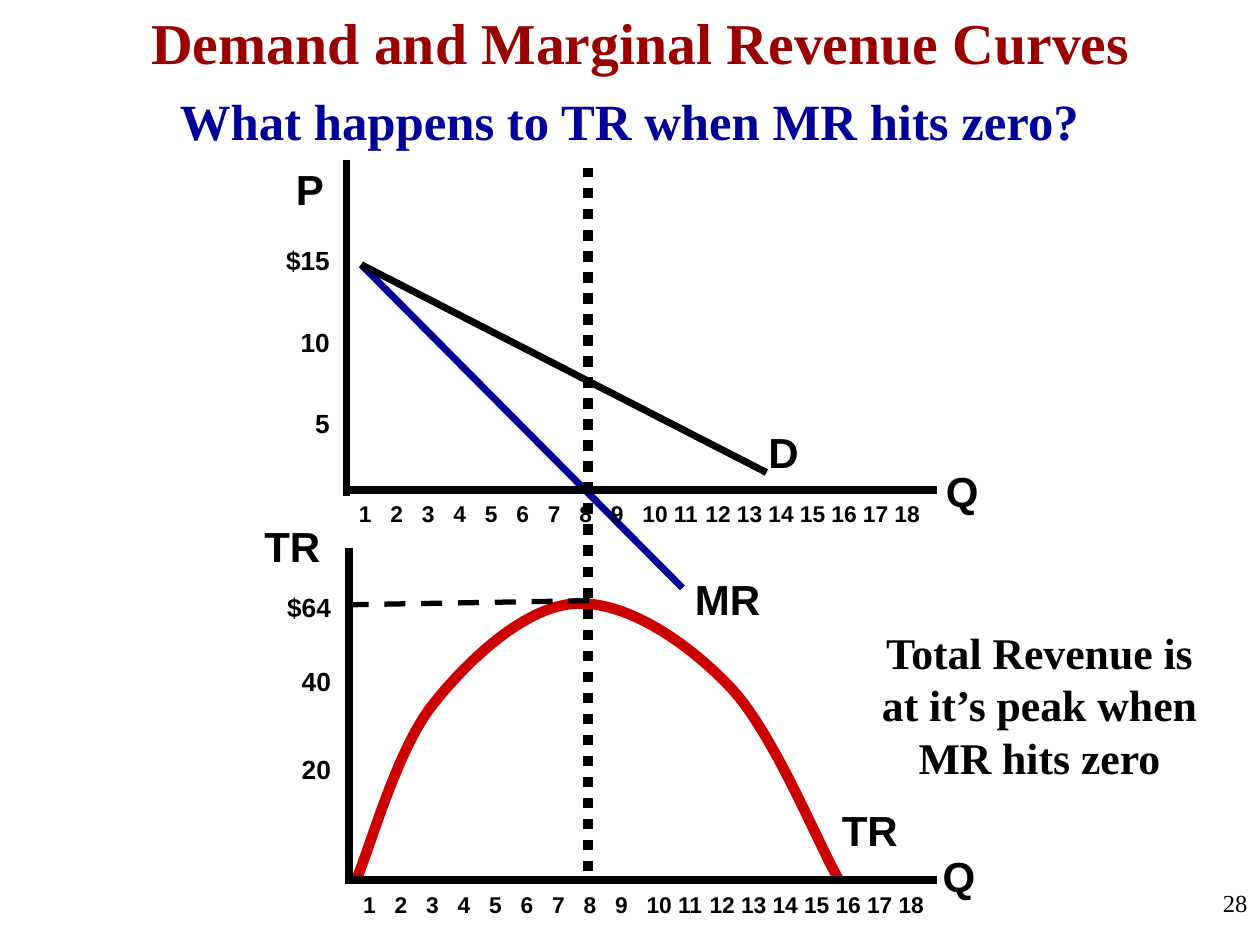
from lxml.etree import SubElement as Sub
from pptx import Presentation
from pptx.dml.color import RGBColor
from pptx.enum.dml import MSO_LINE as Dash
from pptx.enum.shapes import MSO_CONNECTOR as Link
from pptx.enum.text import MSO_ANCHOR as Anchor, MSO_AUTO_SIZE as Fit, PP_ALIGN as Align
from pptx.oxml.ns import qn
from pptx.util import Inches, Pt

COLS, ROWS = 120, 90
BLACK, NAVY, RED, WINE = "000000", "000099", "CC0000", "990000"
SANS, SERIF = "Arial", "Times New Roman"


def hue(code):
    return RGBColor.from_string(code)


def write(frame, text, size=24, font=SANS, color=BLACK, bold=True,
          align=Align.LEFT, gaps=(), wrap=True):
    """Fill a frame, one paragraph a line; gaps are points before lines 2, 3..."""
    frame.word_wrap = wrap
    frame.auto_size = Fit.NONE
    frame.vertical_anchor = Anchor.TOP
    frame.text = text
    for para, gap in zip(frame.paragraphs, (0, *gaps, *[0] * 9)):
        para.alignment = align
        para.space_before = Pt(gap)
        for run in para.runs:
            run.font.size = Pt(size)
            run.font.name = font
            run.font.bold = bold
            run.font.color.rgb = hue(color)


def bezier(start, parts, steps=20):
    """Points along a chain of cubic curves."""
    points = [start]
    for one, two, end in parts:
        for step in range(1, steps + 1):
            t = step / steps
            u = 1 - t
            points.append(tuple(
                u**3 * a + 3 * u * u * t * b + 3 * u * t * t * c + t**3 * d
                for a, b, c, d in zip(start, one, two, end)))
        start = end
    return points


class Board:
    """The current slide, measured in columns and rows."""

    def __init__(self, deck):
        self.col = deck.slide_width / COLS
        self.row = deck.slide_height / ROWS
        self.slide = deck.slides.add_slide(deck.slide_layouts[5])
        self.shapes = self.slide.shapes

    def spot(self, x, y):
        return round(x * self.col), round(y * self.row)

    def title(self, text, x, y, w, h, **style):
        head = self.shapes.title
        head.left, head.top = self.spot(x, y)
        head.width, head.height = self.spot(w, h)
        write(head.text_frame, text, **style)

    def text(self, text, x, y, w, h, **style):
        box = self.shapes.add_textbox(*self.spot(x, y), *self.spot(w, h))
        write(box.text_frame, text, **style)
        return box

    def scale(self, x, y, count=18, step=3):
        """A row of numbers on evenly spaced tab stops."""
        nums = "\t".join(str(n) for n in range(1, count + 1))
        box = self.text(nums, x, y, 58, 3.7, size=13)
        props = box.text_frame.paragraphs[0]._p.get_or_add_pPr()
        tabs = Sub(props, qn("a:tabLst"))
        for n in range(1, count):
            Sub(tabs, qn("a:tab"), pos=str(round(n * step * self.col)), algn="l")

    def line(self, start, end, width, color=BLACK, dash=None):
        link = self.shapes.add_connector(
            Link.STRAIGHT, *self.spot(*start), *self.spot(*end))
        link.line.color.rgb = hue(color)
        link.line.width = Pt(width)
        if dash:
            link.line.dash_style = dash
        Sub(link._element.spPr, qn("a:effectLst"))

    def curve(self, points, width, color):
        spots = [self.spot(*point) for point in points]
        pen = self.shapes.build_freeform(*spots[0])
        pen.add_line_segments(spots[1:], close=False)
        arc = pen.convert_to_shape()
        arc.shadow.inherit = False
        arc.fill.background()
        arc.line.color.rgb = hue(color)
        arc.line.width = Pt(width)


def main():
    deck = Presentation()
    deck.slide_width, deck.slide_height = Inches(10), Inches(7.5)
    board = Board(deck)

    # Headings
    board.title("Demand and Marginal Revenue Curves", 5, 0, 112, 7.8,
                size=33, font=SERIF, color=WINE, align=Align.CENTER)
    board.text("What happens to TR when MR hits zero?", 4, 8, 112, 7,
               size=29, font=SERIF, color=NAVY, align=Align.CENTER)

    # Curves
    board.curve(bezier((34, 83.6), [
        ((35.2, 80.9), (37.8, 71.3), (41.3, 67)),
        ((44.8, 62.6), (50.2, 57.7), (54.8, 57.5)),
        ((59.5, 57.2), (65.3, 61), (69.5, 65.4)),
        ((73.7, 69.8), (77.8, 80.2), (80, 84)),
    ]), 6, RED)
    peak = (34.4, 25.2)
    board.line(peak, (65, 56), 4, NAVY)
    board.line(peak, (73, 45), 4)

    # Value scales
    side = dict(size=15, align=Align.RIGHT)
    board.text("$15\n10\n5", 24, 22.7, 8.6, 19, gaps=(28.5, 28.5), **side)
    board.text("$64\n40\n20", 24, 55.7, 8.7, 19, gaps=(24.5, 32), **side)

    # Peak of total revenue
    board.line((33.1, 57.6), (56.4, 57.2), 3, dash=Dash.DASH)

    # Axes: x, top and base of the upright, then height of the level line
    for x, top, base, level in ((33, 15.2, 47.2, 46.7), (33.2, 52.2, 84, 83.8)):
        board.line((x, top), (x, base), 4.5)
        board.line((32.9, level), (89.2, level), 4.5)

    # Quantity scales
    board.scale(33, 47)
    board.scale(33.4, 84.2)

    # Where marginal revenue is zero
    board.line((56, 83), (56, 16), 6, dash=Dash.ROUND_DOT)

    # Names of axes and curves
    for name, x, y in (("P", 27, 15), ("Q", 88.9, 43.7), ("D", 72, 40),
                       ("MR", 65, 54), ("TR", 24, 49), ("TR", 79, 76),
                       ("Q", 88.6, 80.4)):
        board.text(name, x, y, 8.6, 6, wrap=False)

    # Remark and page number
    board.text("Total Revenue is at it’s peak when MR hits zero", 81, 59, 36, 16.2,
               size=25, font=SERIF, align=Align.CENTER)
    board.text("28", 95, 84, 25, 6, size=14, font=SERIF, bold=False,
               align=Align.RIGHT)

    deck.save("out.pptx")


if __name__ == "__main__":
    main()
